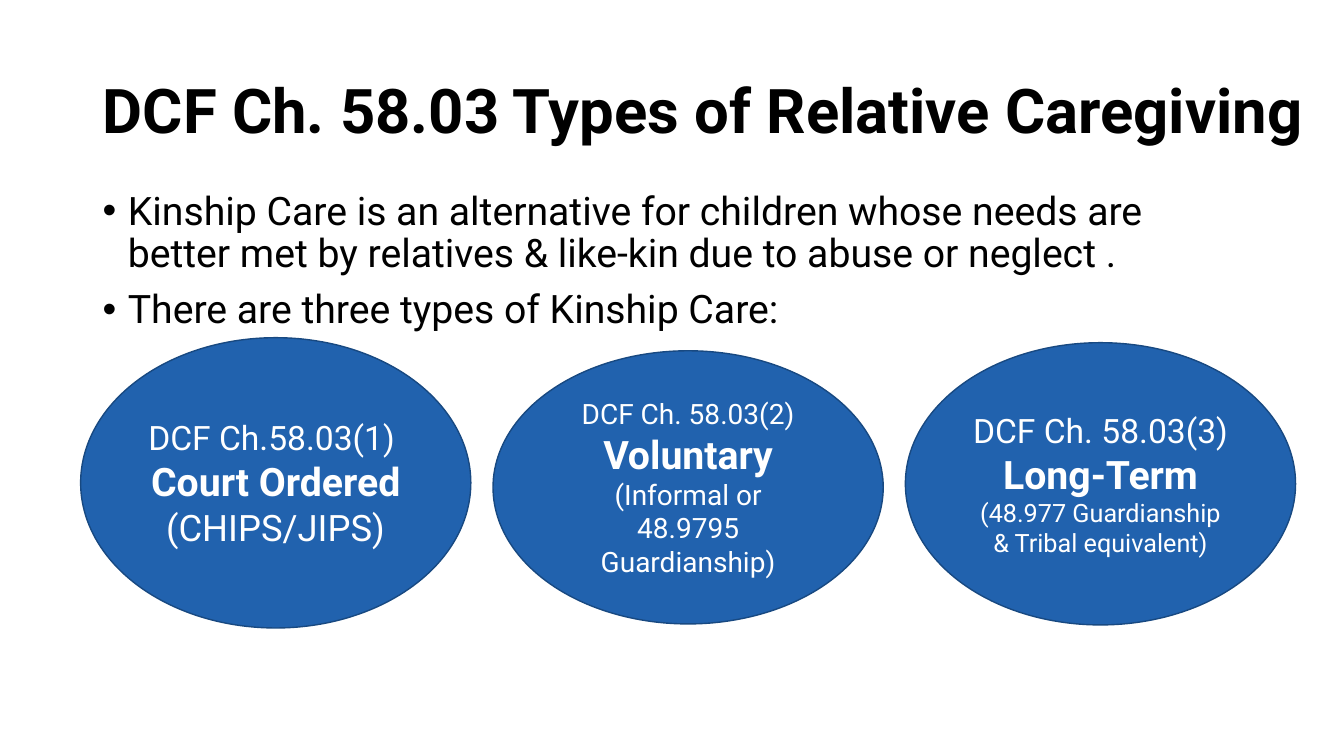
from dataclasses import dataclass

from lxml import etree
from pptx import Presentation
from pptx import util as u
from pptx.dml.color import RGBColor
from pptx.enum import shapes, text
from pptx.oxml.ns import qn


@dataclass(frozen=True)
class Theme:
    font: str = "Roboto"
    ink: str = "000000"
    paper: str = "FFFFFF"
    fill: str = "2162AE"
    outline: str = "184981"
    title: int = 44
    body: int = 28
    name: int = 28


class SlideBuilder:
    """Draws styled elements on the current slide."""

    def __init__(self, slide, theme):
        self.slide = slide
        self.theme = theme

    def style(self, paragraph, size, color, bold=False):
        for run in paragraph.runs:
            run.font.name = self.theme.font
            run.font.size = u.Pt(size)
            run.font.bold = bold
            run.font.color.rgb = RGBColor.from_string(color)

    def text_box(self, left, top, width, height, anchor):
        box = self.slide.shapes.add_textbox(*map(u.Inches, (left, top, width, height)))
        box.text_frame.word_wrap = True
        box.text_frame.vertical_anchor = anchor
        return box.text_frame

    def title(self, wording):
        frame = self.text_box(0.92, 0.4, 12.42, 1.45, text.MSO_ANCHOR.MIDDLE)
        frame.text = wording
        frame.paragraphs[0].line_spacing = 0.9
        self.style(frame.paragraphs[0], self.theme.title, self.theme.ink, bold=True)

    def bullets(self, items):
        frame = self.text_box(0.92, 1.85, 11.5, 4.76, text.MSO_ANCHOR.TOP)
        frame.text = "\n".join(items)
        for index, paragraph in enumerate(frame.paragraphs):
            properties = paragraph._p.get_or_add_pPr()
            properties.set("marL", str(u.Inches(0.25)))
            properties.set("indent", str(u.Inches(-0.25)))
            etree.SubElement(properties, qn("a:buFont"), typeface="Arial")
            etree.SubElement(properties, qn("a:buChar"), char="•")
            paragraph.line_spacing = 0.9
            paragraph.space_before = u.Pt(10 if index else 0)
            self.style(paragraph, self.theme.body, self.theme.ink)

    def care_type(self, preset, left, top, height, lines, sizes):
        shape = self.slide.shapes.add_shape(
            preset, *map(u.Inches, (left, top, 3.87, height)))
        shape.shadow.inherit = False
        shape.fill.solid()
        shape.fill.fore_color.rgb = RGBColor.from_string(self.theme.fill)
        shape.line.color.rgb = RGBColor.from_string(self.theme.outline)
        shape.line.width = u.Pt(1)
        frame = shape.text_frame
        frame.word_wrap = True
        frame.vertical_anchor = text.MSO_ANCHOR.MIDDLE
        frame.text = "\n".join(lines)
        rule_size, detail_size = sizes
        all_sizes = (rule_size, self.theme.name, detail_size)
        for index, (paragraph, size) in enumerate(zip(frame.paragraphs, all_sizes)):
            paragraph.alignment = text.PP_ALIGN.CENTER
            self.style(paragraph, size, self.theme.paper, bold=index == 1)


def main():
    presentation = Presentation()
    presentation.slide_width = u.Inches(13.33)
    presentation.slide_height = u.Inches(7.5)
    slide = presentation.slides.add_slide(presentation.slide_layouts[6])
    builder = SlideBuilder(slide, Theme())

    builder.title("DCF Ch. 58.03 Types of Relative Caregiving")
    builder.bullets((
        "Kinship Care is an alternative for children whose needs are better met "
        "by relatives & like-kin due to abuse or neglect .",
        "There are three types of Kinship Care:",
    ))

    oval = shapes.MSO_SHAPE.OVAL
    connector = shapes.MSO_SHAPE.FLOWCHART_CONNECTOR
    care_types = (
        (connector, 3.35, 2.88,
         ("DCF Ch.58.03(1) ", "Court Ordered", "(CHIPS/JIPS)"), (24, 26)),
        (oval, 3.48, 2.71,
         ("DCF Ch. 58.03(2)", "Voluntary", "(Informal or 48.9795 Guardianship)"),
         (20, 20)),
        (connector, 3.4, 2.8,
         ("DCF Ch. 58.03(3)", "Long-Term",
          "(48.977 Guardianship & Tribal equivalent)"), (24, 18)),
    )
    for column, (preset, top, height, lines, sizes) in enumerate(care_types):
        builder.care_type(preset, 0.8 + 4.09 * column, top, height, lines, sizes)

    presentation.save("out.pptx")


if __name__ == "__main__":
    main()
